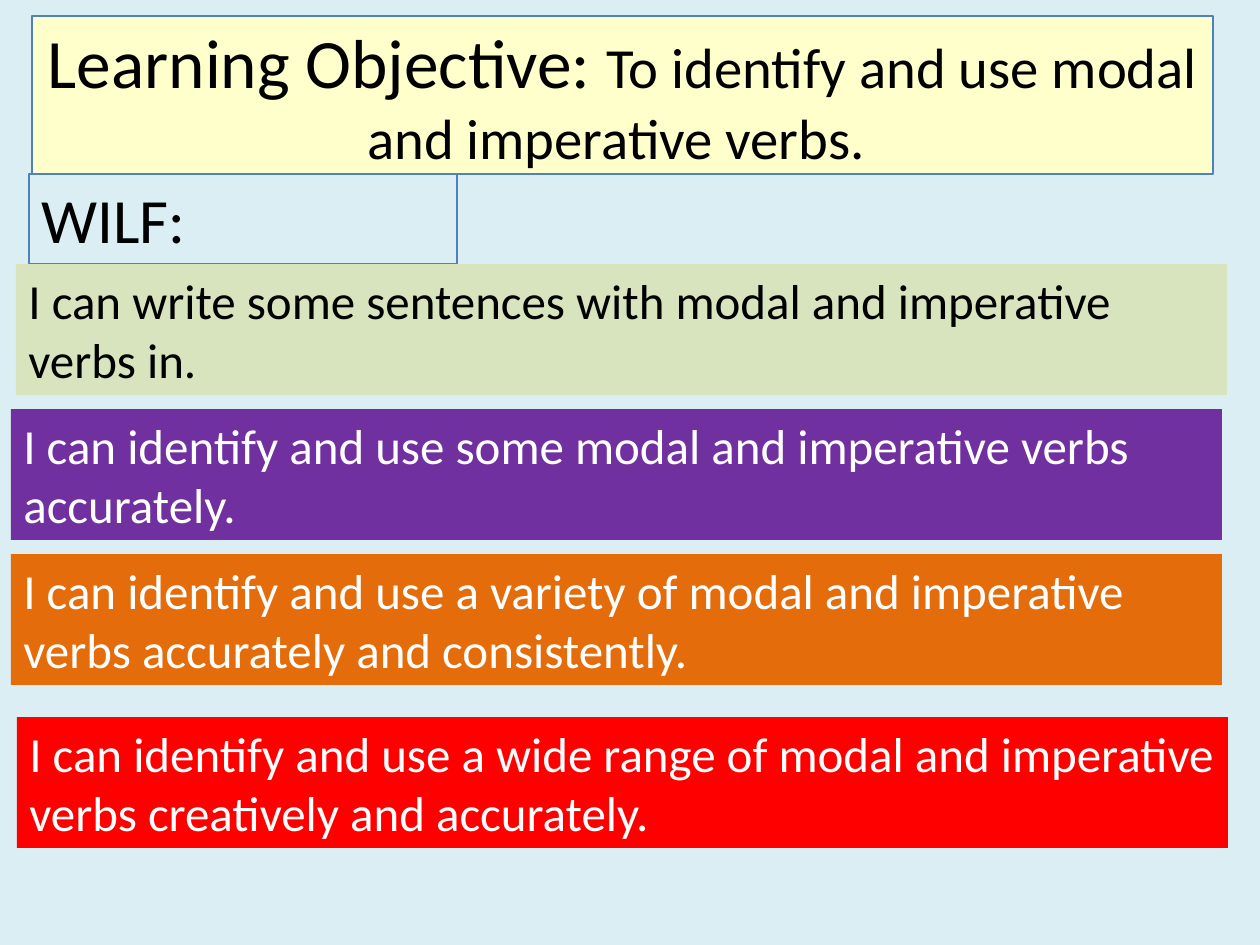
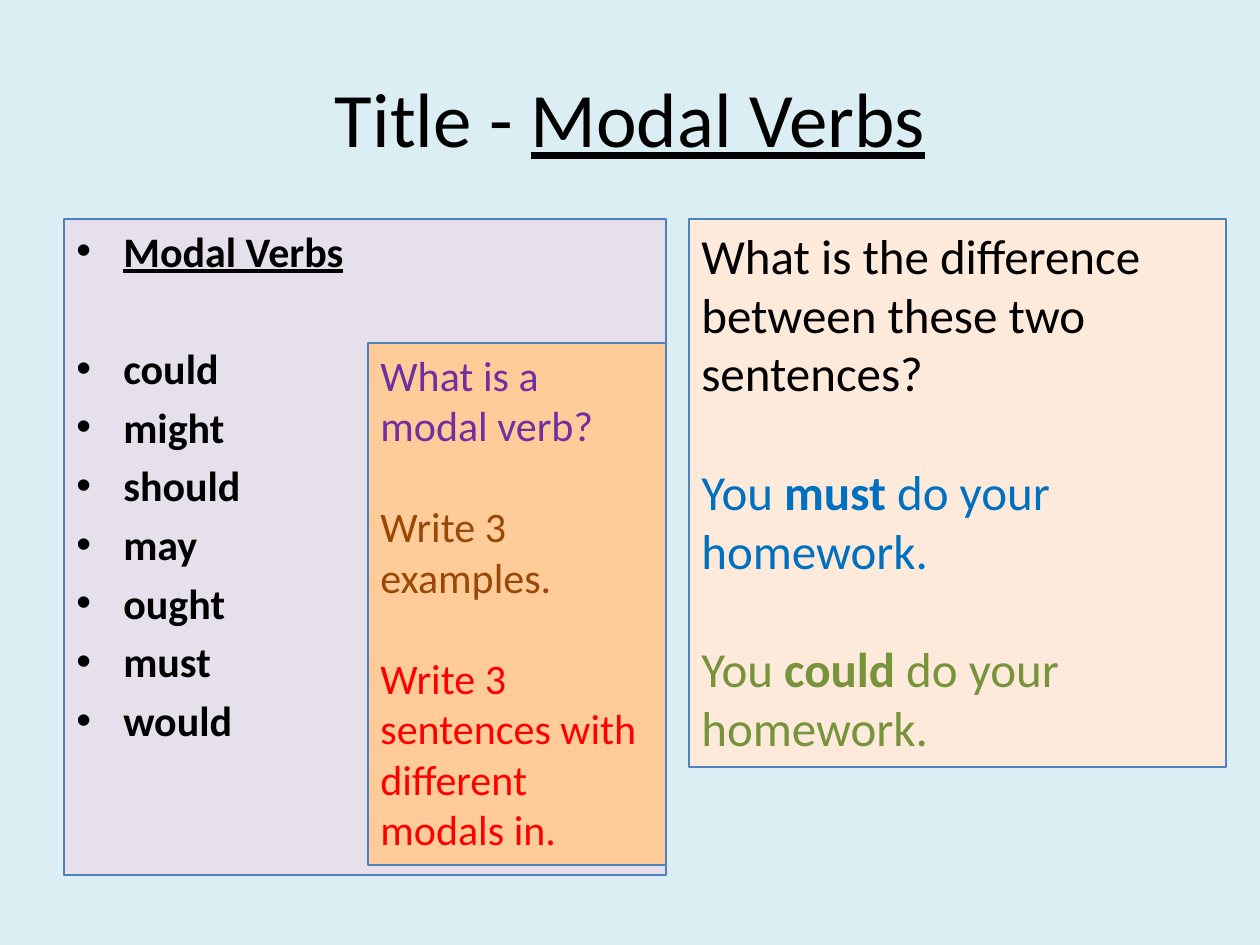
from lxml import etree
from pptx import Presentation
from pptx.dml.color import RGBColor
from pptx.enum.shapes import MSO_SHAPE
from pptx.enum.text import MSO_ANCHOR, PP_ALIGN
from pptx.oxml.ns import qn
from pptx.util import Emu, Pt

RECTANGLE = MSO_SHAPE.RECTANGLE
TOP, MIDDLE = MSO_ANCHOR.TOP, MSO_ANCHOR.MIDDLE
LEFT, CENTER = PP_ALIGN.LEFT, PP_ALIGN.CENTER

PX_PER_INCH = 126
FONT = "Calibri"
BACKGROUND = "DBEEF4"
OUTLINE = "4F81BD"
BLACK, WHITE, PURPLE, RED = "000000", "FFFFFF", "7030A0", "FF0000"
BLUE, GREEN, BROWN = "0070C0", "77933C", "984807"

TITLE_SIZE = (1181, 158)
BAND_SIZE = (1211, 131)
BULLET_INDENT = 47

SUCCESS_BANDS = [
    (16, 264, "D7E4BD", BLACK,
     "I can write some sentences with modal and imperative verbs in."),
    (11, 409, PURPLE, WHITE,
     "I can identify and use some modal and imperative verbs accurately."),
    (11, 554, "E46C0A", WHITE,
     "I can identify and use a variety of modal and imperative verbs "
     "accurately and consistently."),
    (17, 717, RED, WHITE,
     "I can identify and use a wide range of modal and imperative verbs "
     "creatively and accurately."),
]
MODAL_VERBS = ["could", "might", "should", "may", "ought", "must", "would"]


def px(length):
    return Emu(round(length * 914400 / PX_PER_INCH))


def rgb(value):
    return RGBColor.from_string(value)


def add_slide(presentation):
    slide = presentation.slides.add_slide(presentation.slide_layouts[6])
    slide.background.fill.solid()
    slide.background.fill.fore_color.rgb = rgb(BACKGROUND)
    return slide


def add_panel(slide, left, top, width, height, fill=None, line=None, anchor=TOP):
    """Add a rectangle and return its empty text frame."""
    shape = slide.shapes.add_shape(
        RECTANGLE, px(left), px(top), px(width), px(height))
    shape.shadow.inherit = False
    if fill:
        shape.fill.solid()
        shape.fill.fore_color.rgb = rgb(fill)
    else:
        shape.fill.background()
    if line:
        shape.line.color.rgb = rgb(line)
        shape.line.width = Pt(0.75)
    else:
        shape.line.fill.background()
    return prepare_frame(shape, anchor)


def prepare_frame(shape, anchor):
    frame = shape.text_frame
    frame.word_wrap = True
    frame.vertical_anchor = anchor
    return frame


def add_bullet(paragraph):
    properties = paragraph._p.get_or_add_pPr()
    properties.set("marL", str(px(BULLET_INDENT)))
    properties.set("indent", str(-px(BULLET_INDENT)))
    etree.SubElement(properties, qn("a:buFont")).set("typeface", "Arial")
    etree.SubElement(properties, qn("a:buChar")).set("char", "•")


def add_paragraph(frame, runs, size, color=BLACK, align=LEFT, space_before=0,
                  bold=False, bullet=False):
    """Fill the first paragraph or add one; runs are (text, font overrides)."""
    is_first = not frame.paragraphs[0].runs
    paragraph = frame.paragraphs[0] if is_first else frame.add_paragraph()
    if bullet:
        add_bullet(paragraph)
    paragraph.alignment = align
    if space_before:
        paragraph.space_before = Pt(space_before)
    font = paragraph.font
    font.name, font.size, font.bold = FONT, Pt(size), bold
    font.color.rgb = rgb(color)
    for text, overrides in runs:
        run = paragraph.add_run()
        run.text = text
        for name, value in overrides.items():
            setattr(run.font, name, value)


def build_objective_slide(presentation):
    slide = add_slide(presentation)
    title = add_panel(slide, 32, 16, *TITLE_SIZE, "FFFFCC", OUTLINE, MIDDLE)
    add_paragraph(title, [
        ("Learning Objective: ", {"size": Pt(39.6)}),
        ("To identify and use modal and imperative verbs. ", {}),
    ], 32.4, align=CENTER)

    heading = add_panel(slide, 29, 174, 428, 90, line=OUTLINE)
    add_paragraph(heading, [("WILF:", {})], 36)

    for left, top, fill, color, text in SUCCESS_BANDS:
        band = add_panel(slide, left, top, *BAND_SIZE, fill)
        add_paragraph(band, [(text, {})], 28, color)


def build_modal_verbs_slide(presentation):
    slide = add_slide(presentation)
    title_box = slide.shapes.add_textbox(px(63), px(38), px(1134), px(158))
    title = prepare_frame(title_box, MIDDLE)
    add_paragraph(title, [("Title - ", {}), ("Modal Verbs", {"underline": True})],
                  44, align=CENTER)

    verbs = add_panel(slide, 64, 219, 602, 656, "E6E0EC", OUTLINE)
    add_paragraph(verbs, [("Modal Verbs", {"underline": True})], 24,
                  bold=True, bullet=True)
    for index, verb in enumerate(MODAL_VERBS):
        add_paragraph(verbs, [(verb, {})], 24, bold=True, bullet=True,
                      space_before=4.7 if index else 38.3)

    comparison = add_panel(slide, 689, 219, 537, 548, "FDEADA", OUTLINE)
    add_paragraph(comparison, [
        ("What is the difference between these two sentences?", {})], 28)
    for verb, color in (("must", BLUE), ("could", GREEN)):
        add_paragraph(comparison, [
            ("You ", {}), (verb, {"bold": True}), (" do your homework.", {}),
        ], 28, color, space_before=34)

    tasks = add_panel(slide, 368, 343, 298, 522, "FFCC99", OUTLINE)
    for text, color, gap in (
            ("What is a modal verb?", PURPLE, 0),
            ("Write 3 examples.", BROWN, 29),
            ("Write 3 sentences with different modals in.", RED, 29)):
        add_paragraph(tasks, [(text, {})], 24, color, space_before=gap)


def main():
    presentation = Presentation()
    presentation.slide_width, presentation.slide_height = px(1260), px(945)
    build_objective_slide(presentation)
    build_modal_verbs_slide(presentation)
    presentation.save("out.pptx")


if __name__ == "__main__":
    main()
